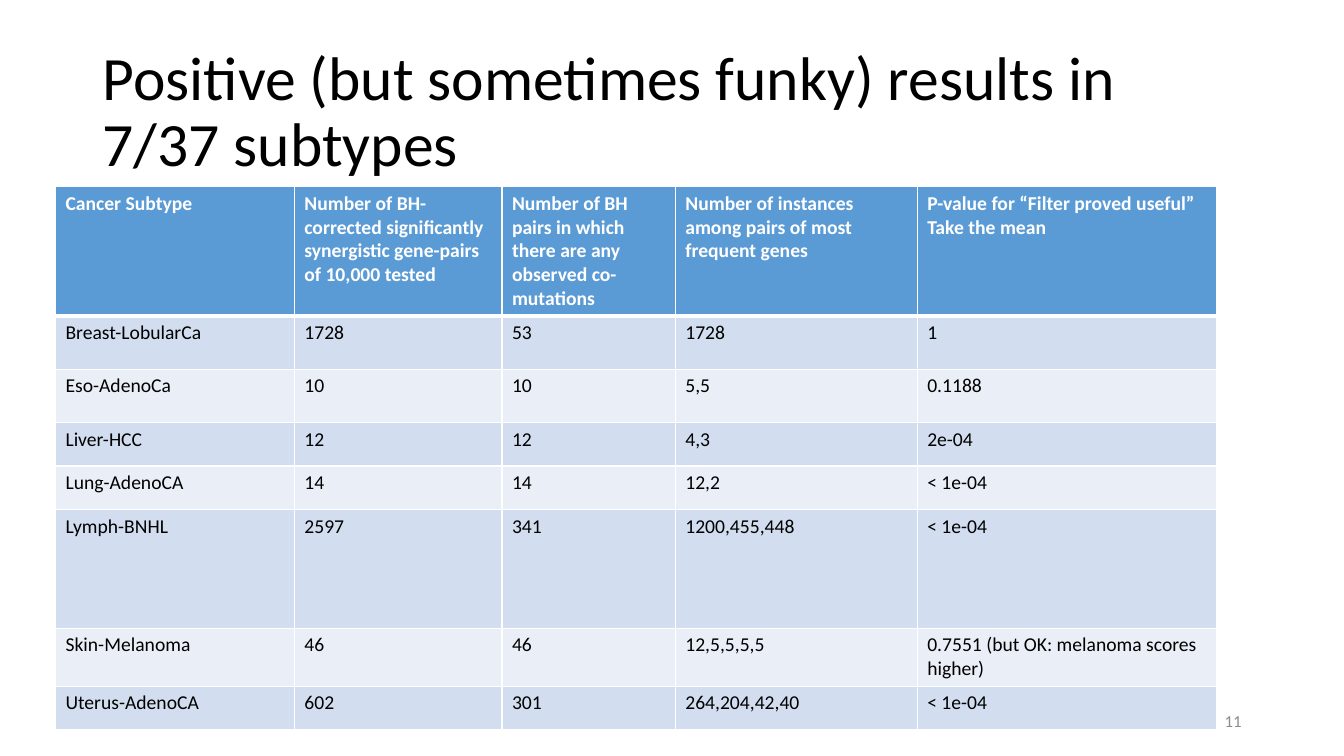
from dataclasses import dataclass

from lxml.etree import SubElement
from pptx import Presentation
from pptx.dml.color import RGBColor
from pptx.enum.text import MSO_ANCHOR as Anchor, MSO_AUTO_SIZE as AutoSize, PP_ALIGN as Align
from pptx.oxml.ns import qn
from pptx.util import Emu, Inches, Pt

GRID_COLUMNS, GRID_ROWS = 160, 90
SLIDE_WIDTH, SLIDE_HEIGHT = Inches(GRID_COLUMNS / 12), Inches(GRID_ROWS / 12)
FONT = "Calibri"
BLACK, WHITE, GRAY = "000000", "FFFFFF", "8C8C8C"
HEADER_FILL, BAND_FILLS = "5B9BD5", ("D2DEEF", "EAEFF7")
COLUMN_SPANS = (28.44, 24.72, 20.64, 28.8, 35.64)
HEADER_SPAN = 11.52


@dataclass(frozen=True)
class Area:
    column: float
    row: float
    columns: float
    rows: float


@dataclass(frozen=True)
class Subtype:
    name: str
    significant_pairs: str
    comutated_pairs: str
    instances: str
    p_value: str
    span: float = 5.16

    def values(self) -> tuple[str, ...]:
        return (self.name, self.significant_pairs, self.comutated_pairs,
                self.instances, self.p_value)


TITLE_AREA = Area(11, 4.8, 138, 17.4)
TABLE_AREA = Area(6.6, 22.2, sum(COLUMN_SPANS), 64.56)
NUMBER_AREA = Area(113, 83.4, 36, 4.8)

HEADERS = (
    "Cancer Subtype",
    "Number of BH-corrected significantly synergistic gene-pairs of 10,000 tested",
    "Number of BH pairs in which there are any observed co-mutations",
    "Number of instances among pairs of most frequent genes",
    "P-value for “Filter proved useful”\nTake the mean",
)
SUBTYPES = (
    Subtype("Breast-LobularCa", "1728", "53", "1728", "1", 6.36),
    Subtype("Eso-AdenoCa", "10", "10", "5,5", "0.1188", 6.36),
    Subtype("Liver-HCC", "12", "12", "4,3", "2e-04"),
    Subtype("Lung-AdenoCA", "14", "14", "12,2", "< 1e-04"),
    Subtype("Lymph-BNHL", "2597", "341", "1200,455,448", "< 1e-04", 14.16),
    Subtype("Skin-Melanoma", "46", "46", "12,5,5,5,5",
            "0.7551 (but OK: melanoma scores higher)"),
    Subtype("Uterus-AdenoCA", "602", "301", "264,204,42,40", "< 1e-04"),
)


def across(columns: float) -> Emu:
    return Emu(round(SLIDE_WIDTH * columns / GRID_COLUMNS))


def down(rows: float) -> Emu:
    return Emu(round(SLIDE_HEIGHT * rows / GRID_ROWS))


def bounds(area: Area) -> tuple[Emu, Emu, Emu, Emu]:
    return across(area.column), down(area.row), across(area.columns), down(area.rows)


def color(value: str) -> RGBColor:
    return RGBColor.from_string(value)


def write_text(text_frame, text: str, *, size: float, fill: str = BLACK, bold: bool = False,
               align=Align.LEFT, anchor=None, line_spacing: float | None = None) -> None:
    text_frame.word_wrap = True
    if anchor is not None:
        text_frame.vertical_anchor = anchor
    text_frame.text = text
    for paragraph in text_frame.paragraphs:
        paragraph.alignment = align
        paragraph.line_spacing = line_spacing
        for run in paragraph.runs:
            run.font.name = FONT
            run.font.size = Pt(size)
            run.font.bold = bold
            run.font.color.rgb = color(fill)


def add_border(cell, side: str, width: float) -> None:
    properties = cell._tc.get_or_add_tcPr()
    line = SubElement(properties, qn(f"a:ln{side}"), w=str(Pt(width)))
    solid = SubElement(line, qn("a:solidFill"))
    SubElement(solid, qn("a:srgbClr"), val=WHITE)


def format_cell(cell, text: str, row_index: int) -> None:
    is_header = row_index == 0
    top = 3 if row_index == 1 else 1
    bottom = 3 if is_header else 1
    for side, width in (("L", 1), ("R", 1), ("T", top), ("B", bottom)):
        add_border(cell, side, width)
    cell.fill.solid()
    cell.fill.fore_color.rgb = color(HEADER_FILL if is_header else BAND_FILLS[(row_index - 1) % 2])
    write_text(cell.text_frame, text, size=14, fill=WHITE if is_header else BLACK, bold=is_header)


def add_title(slide, text: str) -> None:
    title = slide.shapes.title
    title.left, title.top, title.width, title.height = bounds(TITLE_AREA)
    title.text_frame.auto_size = AutoSize.NONE
    write_text(title.text_frame, text, size=44, anchor=Anchor.MIDDLE, line_spacing=0.9)


def add_subtype_table(slide) -> None:
    rows = [HEADERS] + [subtype.values() for subtype in SUBTYPES]
    spans = [HEADER_SPAN] + [subtype.span for subtype in SUBTYPES]
    table = slide.shapes.add_table(len(rows), len(HEADERS), *bounds(TABLE_AREA)).table
    for column, span in zip(table.columns, COLUMN_SPANS):
        column.width = across(span)
    for row_index, (row, span, values) in enumerate(zip(table.rows, spans, rows)):
        row.height = down(span)
        for cell, text in zip(row.cells, values):
            format_cell(cell, text, row_index)


def add_slide_number(slide, text: str) -> None:
    number = slide.shapes.add_textbox(*bounds(NUMBER_AREA))
    write_text(number.text_frame, text, size=12, fill=GRAY, align=Align.RIGHT,
               anchor=Anchor.MIDDLE)


def main() -> None:
    presentation = Presentation()
    presentation.slide_width, presentation.slide_height = SLIDE_WIDTH, SLIDE_HEIGHT
    slide = presentation.slides.add_slide(presentation.slide_layouts.get_by_name("Title Only"))
    add_title(slide, "Positive (but sometimes funky) results in 7/37 subtypes")
    add_subtype_table(slide)
    add_slide_number(slide, "11")
    presentation.save("out.pptx")


if __name__ == "__main__":
    main()
